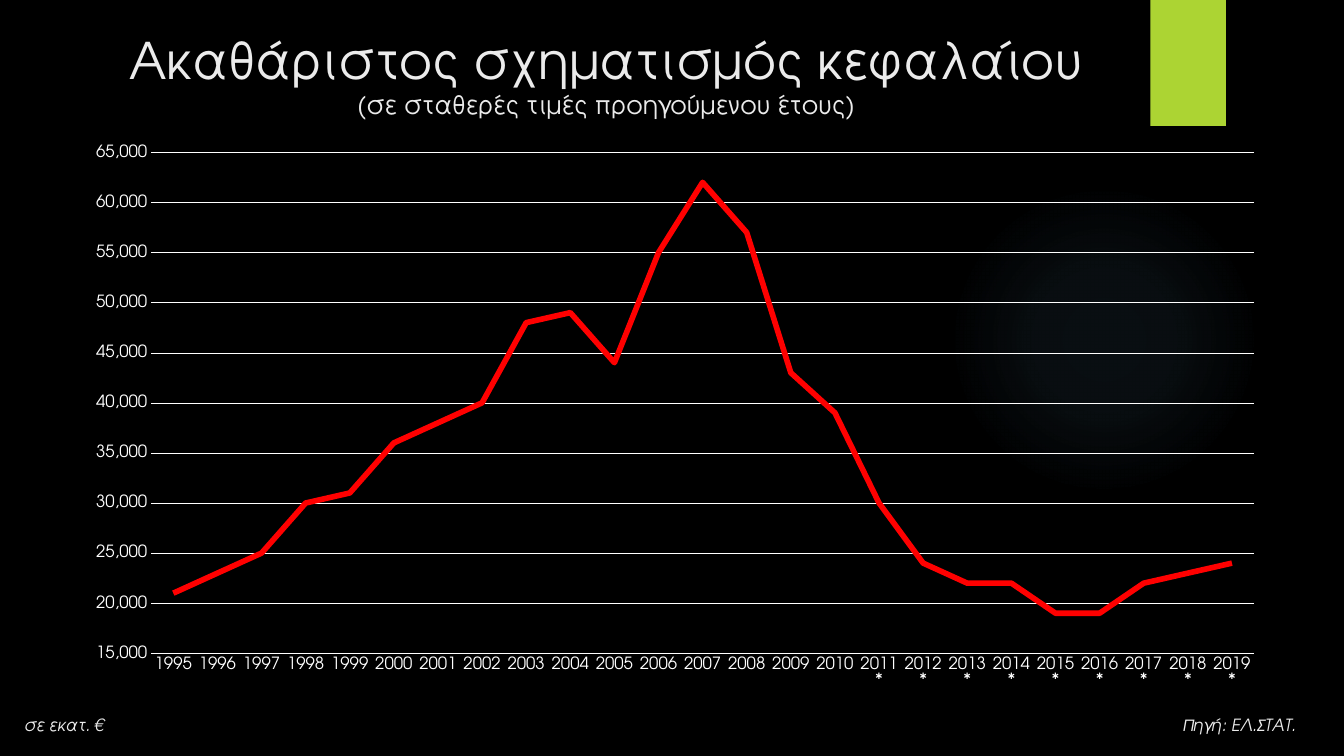
import pptx
import pptx.chart.data
import pptx.dml.color
import pptx.enum.chart
import pptx.enum.shapes
import pptx.enum.text
import pptx.oxml
import pptx.oxml.ns
import pptx.util

Inches = pptx.util.Inches
Pt = pptx.util.Pt
FONT = "TeX Gyre Adventor"
COLORS = {
    "background": "000000",
    "glow": "7AC4F0",
    "tab": "ACD433",
    "text": "EBEBEB",
    "axis": "FFFFFF",
    "series": "FF0000",
}
YEARS = [f"{year}*" if year > 2010 else str(year) for year in range(1995, 2020)]
CAPITAL = [
    21000, 23000, 25000, 30000, 31000, 36000, 38000, 40000, 48000,
    49000, 44000, 55000, 62000, 57000, 43000, 39000, 30000, 24000,
    22000, 22000, 19000, 19000, 22000, 23000, 24000,
]


def rgb(name):
    return pptx.dml.color.RGBColor.from_string(COLORS[name])


def style_font(font, size, color, italic=False):
    font.name = FONT
    font.size = Pt(size)
    font.italic = italic
    font.color.rgb = rgb(color)


def add_plain_shape(s, kind, left, top, width, height):
    sp = s.shapes.add_shape(kind, Inches(left), Inches(top), Inches(width), Inches(height))
    sp.shadow.inherit = False
    sp.line.fill.background()
    sp.fill.solid()
    return sp


def add_text_box(s, left, top, width, height, text):
    sp = s.shapes.add_textbox(Inches(left), Inches(top), Inches(width), Inches(height))
    tf = sp.text_frame
    tf.word_wrap = True
    tf.text = text
    return tf


def add_glow(s, left, top, size):
    sp = add_plain_shape(s, pptx.enum.shapes.MSO_SHAPE.OVAL, left, top, size, size)
    stops = "".join(
        f'<a:gs pos="{pos * 1000}"><a:srgbClr val="{COLORS["glow"]}">'
        f'<a:alpha val="{alpha * 1000}"/></a:srgbClr></a:gs>'
        for pos, alpha in ((0, 7), (36, 6), (69, 0), (100, 0))
    )
    gradient = pptx.oxml.parse_xml(
        f'<a:gradFill {pptx.oxml.ns.nsdecls("a")}><a:gsLst>{stops}</a:gsLst>'
        '<a:path path="circle"><a:fillToRect l="50000" t="50000" r="50000" b="50000"/>'
        "</a:path></a:gradFill>"
    )
    solid = sp.element.spPr.find(pptx.oxml.ns.qn("a:solidFill"))
    solid.getparent().replace(solid, gradient)


def add_tab(s, left, top, width, height):
    sp = add_plain_shape(s, pptx.enum.shapes.MSO_SHAPE.RECTANGLE, left, top, width, height)
    sp.fill.fore_color.rgb = rgb("tab")


def add_title(s, left, top, width, height):
    tf = add_text_box(
        s, left, top, width, height,
        "Ακαθάριστος σχηματισμός κεφαλαίου\v(σε σταθερές τιμές προηγούμενου έτους)",
    )
    tf.vertical_anchor = pptx.enum.text.MSO_ANCHOR.MIDDLE
    p = tf.paragraphs[0]
    p.alignment = pptx.enum.text.PP_ALIGN.CENTER
    for r, size in zip(p.runs, (36, 18)):
        style_font(r.font, size, "text")


def set_plot_layout(chart, x, y, w, h):
    plot_area = chart.element.find(".//" + pptx.oxml.ns.qn("c:plotArea"))
    for old in plot_area.findall(pptx.oxml.ns.qn("c:layout")):
        plot_area.remove(old)
    sizes = "".join(
        f'<c:{key} val="{value}"/>' for key, value in zip("xywh", (x, y, w, h))
    )
    plot_area.insert(0, pptx.oxml.parse_xml(
        f'<c:layout {pptx.oxml.ns.nsdecls("c")}><c:manualLayout>'
        '<c:layoutTarget val="inner"/><c:xMode val="edge"/><c:yMode val="edge"/>'
        f"{sizes}</c:manualLayout></c:layout>"
    ))


def add_capital_chart(s, left, top, width, height):
    data = pptx.chart.data.CategoryChartData()
    data.categories = YEARS
    data.add_series("Series 1", CAPITAL)
    chart = s.shapes.add_chart(
        pptx.enum.chart.XL_CHART_TYPE.LINE,
        Inches(left), Inches(top), Inches(width), Inches(height), data,
    ).chart
    chart.has_legend = False
    chart.has_title = False
    style_font(chart.font, 10, "axis")
    set_plot_layout(chart, 0.066, 0.034, 0.913, 0.883)

    for axis in (chart.category_axis, chart.value_axis):
        axis.major_tick_mark = pptx.enum.chart.XL_TICK_MARK.NONE
        axis.minor_tick_mark = pptx.enum.chart.XL_TICK_MARK.NONE
        style_font(axis.tick_labels.font, 12, "axis")

    years = chart.category_axis
    years.format.line.color.rgb = rgb("axis")
    years.format.line.width = Pt(0.75)

    amounts = chart.value_axis
    amounts.minimum_scale = 15000
    amounts.maximum_scale = 65000
    amounts.major_unit = 5000
    amounts.tick_labels.number_format = "#,##0"
    amounts.tick_labels.number_format_is_linked = False
    amounts.format.line.fill.background()
    grid = amounts.major_gridlines.format.line
    grid.color.rgb = rgb("axis")
    grid.width = Pt(0.25)

    plot = chart.plots[0]
    plot.vary_by_categories = False
    series = plot.series[0]
    series.smooth = False
    series.marker.style = pptx.enum.chart.XL_MARKER_STYLE.NONE
    series.format.line.color.rgb = rgb("series")
    series.format.line.width = Pt(4)


def add_footer(s, left, top, width, height):
    tf = add_text_box(s, left, top, width, height, "σε εκατ. €\tΠηγή: ΕΛ.ΣΤΑΤ.")
    p = tf.paragraphs[0]
    tab_stop = Inches(width - 0.43)
    p._p.get_or_add_pPr().append(pptx.oxml.parse_xml(
        f'<a:tabLst {pptx.oxml.ns.nsdecls("a")}><a:tab pos="{tab_stop}" algn="r"/></a:tabLst>'
    ))
    for r in p.runs:
        style_font(r.font, 12, "text", italic=True)


def main():
    prs = pptx.Presentation()
    prs.slide_width = Inches(13.33)
    prs.slide_height = Inches(7.5)
    s = prs.slides.add_slide(prs.slide_layouts[6])
    s.background.fill.solid()
    s.background.fill.fore_color.rgb = rgb("background")
    add_glow(s, 9.41, 1.83, 3.08)
    add_tab(s, 11.41, 0, 0.75, 1.25)
    add_title(s, 0.87, 0.15, 10.28, 1.17)
    add_capital_chart(s, 0.71, 1.32, 11.98, 5.63)
    add_footer(s, 0.14, 7.04, 13.05, 0.33)
    prs.save("out.pptx")


if __name__ == "__main__":
    main()
